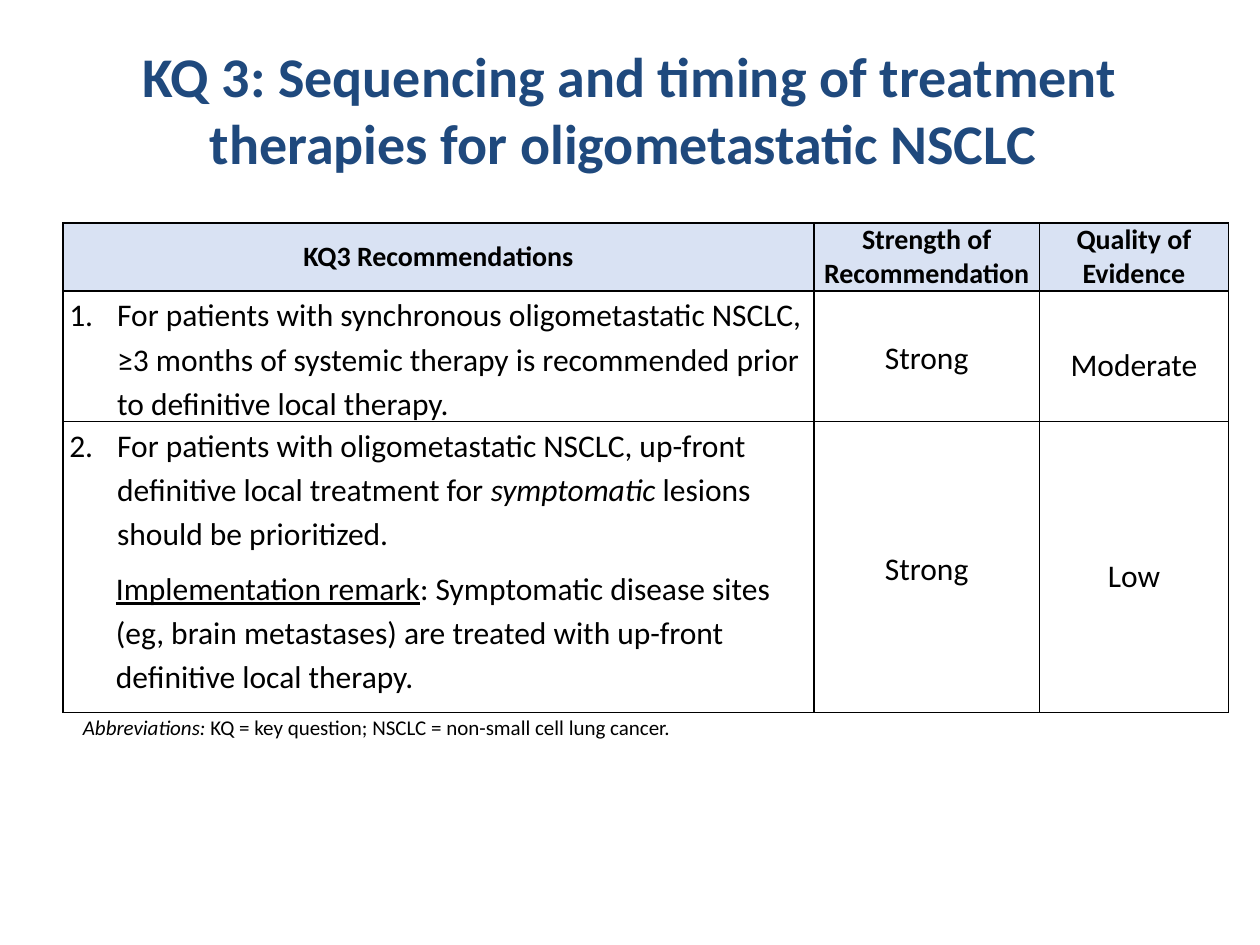
from lxml import etree
from pptx import Presentation, util as u
from pptx.dml.color import RGBColor
from pptx.enum import text
from pptx.oxml.ns import qn

COLORS = {"title": "1F497D", "ink": "000000", "header": "D9E2F3"}
FONT = "Calibri"
SLIDE_W, SLIDE_H = u.Inches(10), u.Inches(7.5)
CENTER, LEFT = text.PP_ALIGN.CENTER, text.PP_ALIGN.LEFT

COLUMNS = (5.96, 1.79, 1.5)
ROWS = (0.54, 1.02, 2.31)
HEADINGS = ("KQ3 Recommendations", "Strength of Recommendation", "Quality of Evidence")
ITALIC, UNDERLINE = {"italic": True}, {"underline": True}

# Each recommendation: numbered statement, optional remark, strength, quality
RECOMMENDATIONS = (
    ([("For patients with synchronous oligometastatic NSCLC, ≥3 months of systemic "
       "therapy is recommended prior to definitive local therapy.", {})],
     None, "Strong", "Moderate"),
    ([("For patients with oligometastatic NSCLC, up-front definitive local treatment for ", {}),
      ("symptomatic", ITALIC),
      (" lesions should be prioritized.", {})],
     [("Implementation remark", UNDERLINE),
      (": Symptomatic disease sites (eg, brain metastases) are treated with up-front "
       "definitive local therapy.", {})],
     "Strong", "Low"),
)


def share(left, top, width, height):
    """Turn shares of the slide into a box in EMU."""
    return [int(part * side) for part, side in
            zip((left, top, width, height), (SLIDE_W, SLIDE_H) * 2)]


def write(paragraph, runs, size, color="ink", bold=False, indent=(0, 0), number=None, **layout):
    """Fill a paragraph with (wording, font settings) runs."""
    props = paragraph._p.get_or_add_pPr()
    margin, first = indent
    props.set("marL", str(u.Inches(margin)))
    props.set("indent", str(u.Inches(first)))
    if number:
        etree.SubElement(props, qn("a:buFont"), typeface="+mj-lt")
        etree.SubElement(props, qn("a:buAutoNum"), type="arabicPeriod", startAt=str(number))
    for name, value in layout.items():
        setattr(paragraph, name, value)
    for wording, extra in runs:
        run = paragraph.add_run()
        run.text = wording
        settings = {"name": FONT, "size": u.Pt(size), "bold": bold, **extra}
        for name, value in settings.items():
            setattr(run.font, name, value)
        run.font.color.rgb = RGBColor.from_string(COLORS[color])


def add_text(slide, box, runs, size, anchor, **format_values):
    frame = slide.shapes.add_textbox(*box).text_frame
    frame.word_wrap = True
    frame.vertical_anchor = anchor
    write(frame.paragraphs[0], runs, size, **format_values)


def style_cell(cell, fill=None, anchor=text.MSO_ANCHOR.MIDDLE):
    settings = {"margin_left": u.Inches(0.05), "margin_right": u.Inches(0.05),
                "margin_top": 0, "margin_bottom": 0, "vertical_anchor": anchor}
    for name, value in settings.items():
        setattr(cell, name, value)
    # Borders come before the fill in the cell properties
    props = cell._tc.get_or_add_tcPr()
    for side in ("lnL", "lnR", "lnT", "lnB"):
        line = etree.SubElement(props, qn(f"a:{side}"), w=str(u.Pt(1)))
        solid = etree.SubElement(line, qn("a:solidFill"))
        etree.SubElement(solid, qn("a:srgbClr"), val=COLORS["ink"])
    if fill:
        cell.fill.solid()
        cell.fill.fore_color.rgb = RGBColor.from_string(COLORS[fill])
    else:
        cell.fill.background()


def add_recommendations(slide, box):
    left, top, width, height = box
    table = slide.shapes.add_table(len(ROWS), len(COLUMNS), *box).table
    table.first_row = table.horz_banding = False
    for column, portion in zip(table.columns, COLUMNS):
        column.width = int(width * portion / sum(COLUMNS))
    for row, portion in zip(table.rows, ROWS):
        row.height = int(height * portion / sum(ROWS))

    # Header row
    for col, heading in enumerate(HEADINGS):
        cell = table.cell(0, col)
        style_cell(cell, fill="header")
        write(cell.text_frame.paragraphs[0], [(heading, {})], 16, bold=True, alignment=CENTER)

    # Recommendation rows
    for number, (statement, remark, strength, quality) in enumerate(RECOMMENDATIONS, 1):
        cell = table.cell(number, 0)
        style_cell(cell, anchor=text.MSO_ANCHOR.TOP)
        write(cell.text_frame.paragraphs[0], statement, 18, indent=(0.38, -0.38), number=number,
              alignment=LEFT, line_spacing=1.15, space_after=u.Pt(6 if remark else 0))
        if remark:
            write(cell.text_frame.add_paragraph(), remark, 18, indent=(0.37, 0),
                  alignment=LEFT, line_spacing=1.15)
        for col, (rating, spacing) in enumerate(((strength, 1.15), (quality, 1.5)), 1):
            cell = table.cell(number, col)
            style_cell(cell)
            write(cell.text_frame.paragraphs[0], [(rating, {})], 18,
                  alignment=CENTER, line_spacing=spacing)


def build():
    deck = Presentation()
    deck.slide_width, deck.slide_height = SLIDE_W, SLIDE_H
    slide = deck.slides.add_slide(deck.slide_layouts[6])

    # Title
    title = "KQ 3: Sequencing and timing of treatment therapies for oligometastatic NSCLC "
    add_text(slide, share(0.05, 0.04, 0.9, 0.15), [(title, {})], 32,
             text.MSO_ANCHOR.MIDDLE, color="title", bold=True, alignment=CENTER)

    # Recommendations table
    add_recommendations(slide, share(0.05, 0.236, 0.925, 0.516))

    # Abbreviations
    add_text(slide, share(0.05, 0.75, 0.82, 0.04),
             [("Abbreviations:", ITALIC),
              (" KQ = key question; NSCLC = non-small cell lung cancer.", {})],
             12, text.MSO_ANCHOR.TOP, indent=(0.06, 0), alignment=LEFT)

    deck.save("out.pptx")


if __name__ == "__main__":
    build()
